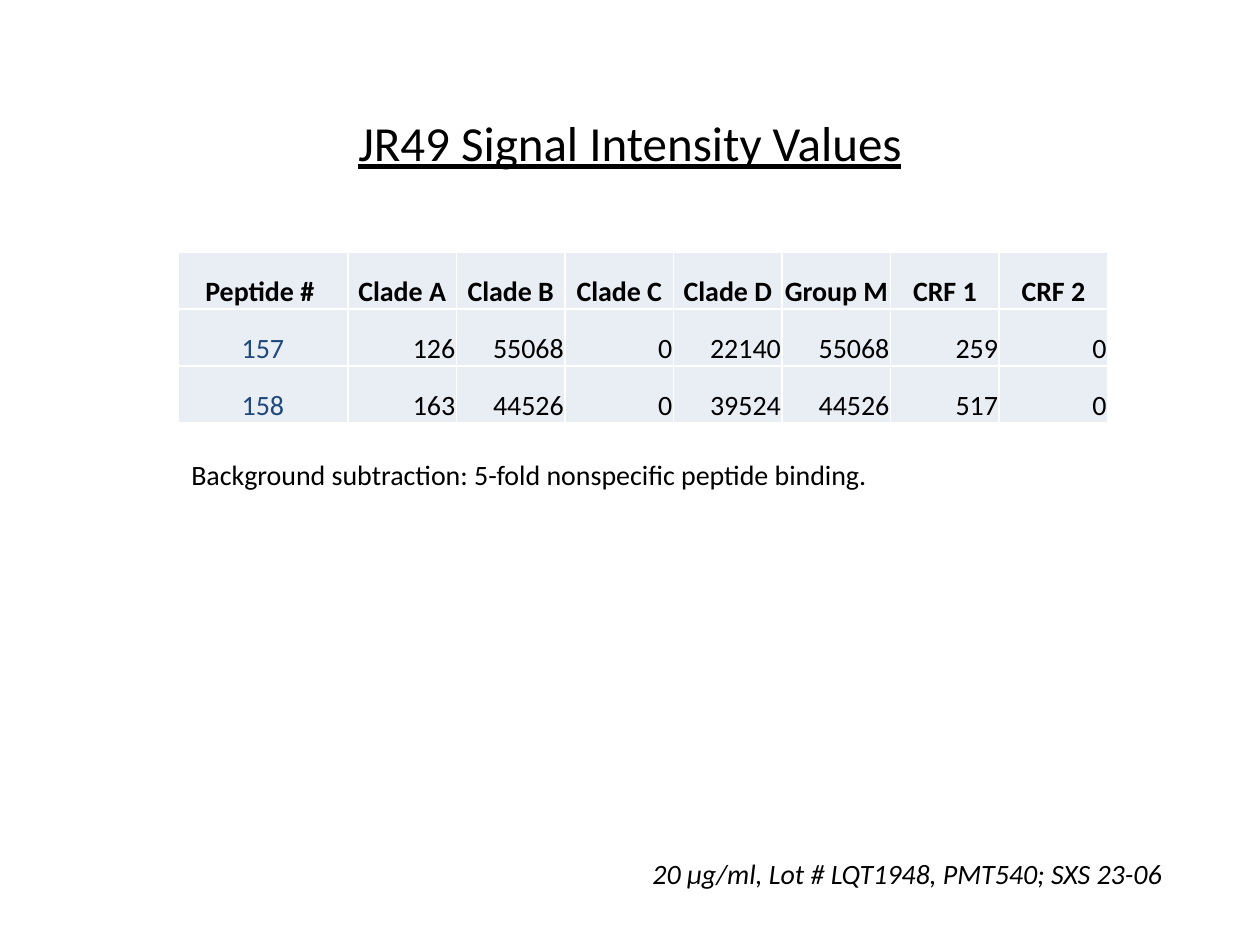
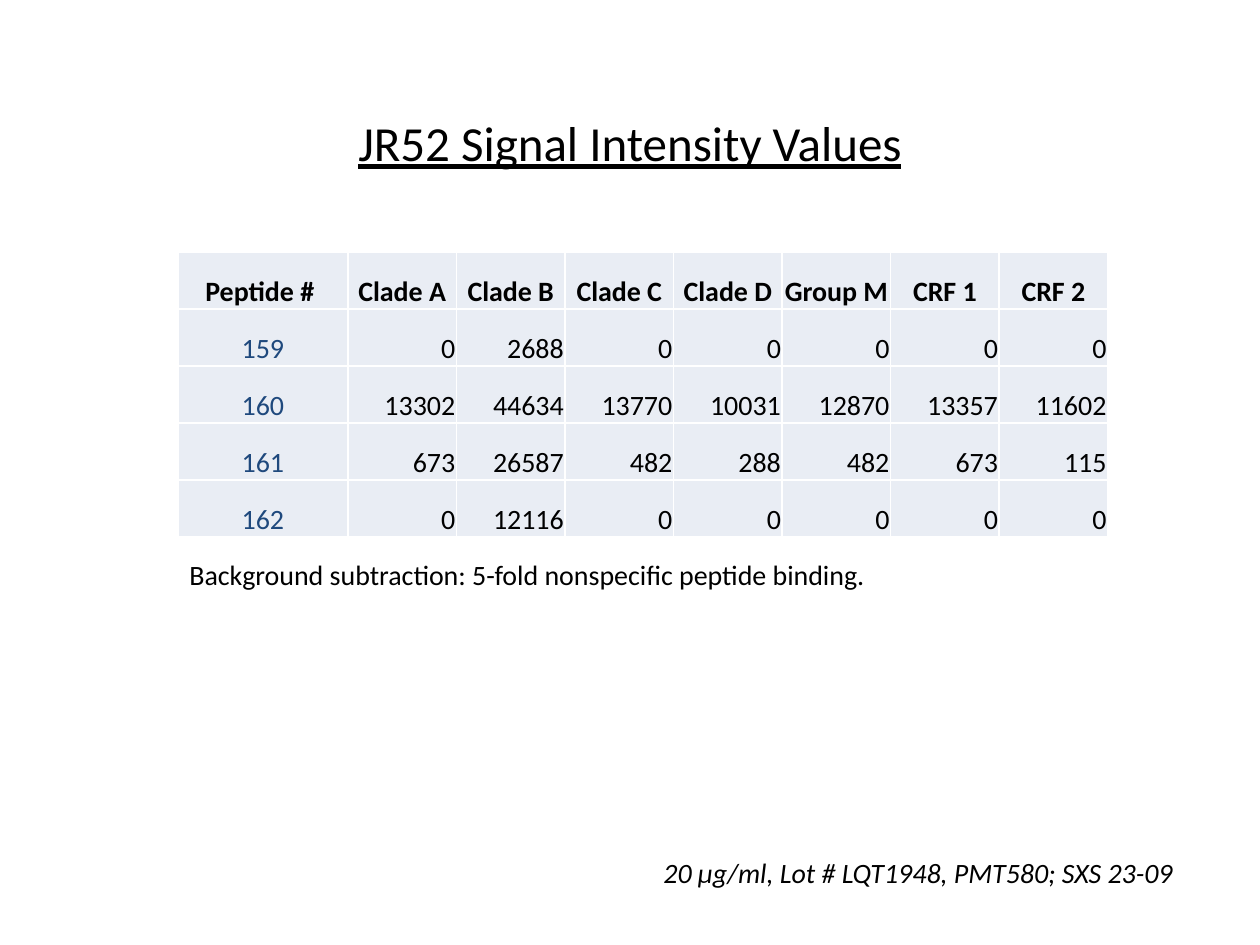
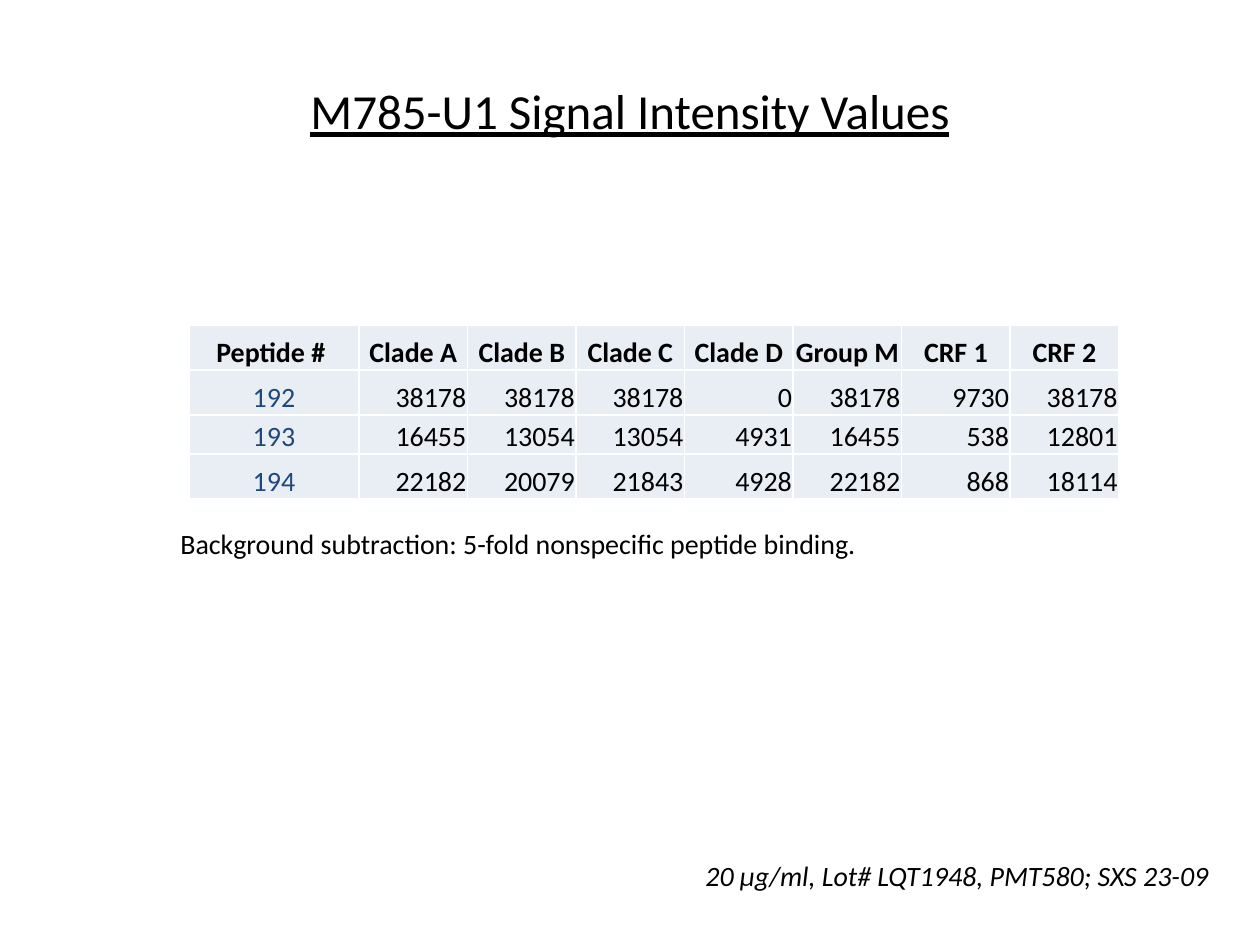
import lxml.etree
import pptx
import pptx.dml.color
import pptx.enum.text
import pptx.oxml.ns
import pptx.util

PIXELS_PER_INCH = 126
FONT = "Calibri"
BLACK, NAVY, PALE, WHITE = "000000", "1F497D", "E9EDF4", "FFFFFF"
ALIGN = pptx.enum.text.PP_ALIGN
ANCHOR = pptx.enum.text.MSO_ANCHOR
AUTO_SIZE = pptx.enum.text.MSO_AUTO_SIZE

TITLE_FORMAT = {"size": pptx.util.Pt(28), "underline": True}
BODY_FORMAT = {"size": pptx.util.Pt(16)}
FOOTER_FORMAT = {**BODY_FORMAT, "italic": True}
HEADER_FORMAT = {**BODY_FORMAT, "bold": True}
CELL_FRAME = {
    "vertical_anchor": ANCHOR.BOTTOM,
    "margin_left": pptx.util.Inches(0.01),
    "margin_top": pptx.util.Inches(0.01),
    "margin_right": pptx.util.Inches(0.01),
    "margin_bottom": 0,
}

TABLE_WIDTH, PEPTIDE_WIDTH = 930, 170
HEADERS = ["Peptide # ", "Clade A", "Clade B", "Clade C", "Clade D", "Group M", "CRF 1", "CRF 2"]
NOTE = "Background subtraction: 5-fold nonspecific peptide binding."

SLIDES = [
    {
        "title": "JR49 Signal Intensity Values",
        "title_top": 63,
        "table_at": (178, 252),
        "row_heights": [57] * 3,
        "readings": [
            [157, 126, 55068, 0, 22140, 55068, 259, 0],
            [158, 163, 44526, 0, 39524, 44526, 517, 0],
        ],
        "footer": "20 µg/ml, Lot # LQT1948, PMT540; SXS 23-06",
        "footer_at": (640, 850),
        "note_at": (179, 451),
    },
    {
        "title": "JR52 Signal Intensity Values",
        "title_top": 63,
        "table_at": (178, 252),
        "row_heights": [57] * 5,
        "readings": [
            [159, 0, 2688, 0, 0, 0, 0, 0],
            [160, 13302, 44634, 13770, 10031, 12870, 13357, 11602],
            [161, 673, 26587, 482, 288, 482, 673, 115],
            [162, 0, 12116, 0, 0, 0, 0, 0],
        ],
        "footer": "20 µg/ml, Lot # LQT1948, PMT580; SXS 23-09",
        "footer_at": (651, 849),
        "note_at": (177, 551),
    },
    {
        "title": "M785-U1 Signal Intensity Values",
        "title_top": 31,
        "table_at": (189, 325),
        "row_heights": [45, 45, 39, 45],
        "readings": [
            [192, 38178, 38178, 38178, 0, 38178, 9730, 38178],
            [193, 16455, 13054, 13054, 4931, 16455, 538, 12801],
            [194, 22182, 20079, 21843, 4928, 22182, 868, 18114],
        ],
        "footer": "20 µg/ml, Lot# LQT1948, PMT580; SXS 23-09",
        "footer_at": (693, 852),
        "note_at": (168, 520),
    },
]


def px(length):
    """Turn pixels into EMU."""
    return pptx.util.Inches(length / PIXELS_PER_INCH)


def color(value):
    """Turn a hex string into a colour."""
    return pptx.dml.color.RGBColor.from_string(value)


def apply(target, values):
    """Set each named attribute on the target."""
    for name, value in values.items():
        setattr(target, name, value)


def write(text_frame, text, formats, align, text_color=BLACK):
    """Put one formatted paragraph into a text frame."""
    paragraph = text_frame.paragraphs[0]
    paragraph.alignment = align
    run = paragraph.add_run()
    run.text = text
    apply(run.font, {"name": FONT, **formats})
    run.font.color.rgb = color(text_color)


def place_title(slide, text, top):
    """Move and fill the title placeholder."""
    title = slide.shapes.title
    apply(title, {"left": px(63), "top": px(top), "width": px(1134), "height": px(158)})
    apply(title.text_frame, {"vertical_anchor": ANCHOR.MIDDLE, "auto_size": AUTO_SIZE.NONE})
    write(title.text_frame, text, TITLE_FORMAT, ALIGN.CENTER)


def add_label(slide, text, position, width, formats):
    """Add a single-line text box that grows with its text."""
    left, top = position
    label = slide.shapes.add_textbox(px(left), px(top), px(width), px(47))
    apply(label.text_frame, {"word_wrap": False, "auto_size": AUTO_SIZE.SHAPE_TO_FIT_TEXT})
    write(label.text_frame, text, formats, ALIGN.LEFT)


def add_borders(cell):
    """Draw a thin white line on every side of a cell."""
    qualify = pptx.oxml.ns.qn
    properties = cell._tc.get_or_add_tcPr()
    for side in ("a:lnL", "a:lnR", "a:lnT", "a:lnB"):
        line = lxml.etree.SubElement(properties, qualify(side), w=str(pptx.util.Pt(1)))
        fill = lxml.etree.SubElement(line, qualify("a:solidFill"))
        lxml.etree.SubElement(fill, qualify("a:srgbClr"), val=WHITE)


def fill_cell(cell, text, formats, align, text_color):
    """Format and fill one table cell."""
    apply(cell, CELL_FRAME)
    add_borders(cell)
    cell.fill.solid()
    cell.fill.fore_color.rgb = color(PALE)
    write(cell.text_frame, text, formats, align, text_color)


def add_readings(slide, position, row_heights, readings):
    """Add the table of signal intensities."""
    left, top = position
    rows = [HEADERS, *readings]
    frame = slide.shapes.add_table(
        len(rows), len(HEADERS), px(left), px(top), px(TABLE_WIDTH), px(sum(row_heights)))
    table = frame.table
    apply(table, {"first_row": False, "horz_banding": False})
    clade_width = (TABLE_WIDTH - PEPTIDE_WIDTH) / (len(HEADERS) - 1)
    for index, column in enumerate(table.columns):
        column.width = px(clade_width if index else PEPTIDE_WIDTH)
    for row, height in zip(table.rows, row_heights):
        row.height = px(height)
    for row_index, values in enumerate(rows):
        for column_index, value in enumerate(values):
            is_header, is_peptide = row_index == 0, column_index == 0
            fill_cell(
                table.cell(row_index, column_index),
                str(value),
                HEADER_FORMAT if is_header else BODY_FORMAT,
                ALIGN.CENTER if is_header or is_peptide else ALIGN.RIGHT,
                NAVY if is_peptide and not is_header else BLACK)


def main():
    """Build the presentation."""
    presentation = pptx.Presentation()
    apply(presentation, {"slide_width": px(1260), "slide_height": px(945)})
    for content in SLIDES:
        slide = presentation.slides.add_slide(presentation.slide_layouts[5])
        place_title(slide, content["title"], content["title_top"])
        add_readings(slide, content["table_at"], content["row_heights"], content["readings"])
        add_label(slide, content["footer"], content["footer_at"], 537, FOOTER_FORMAT)
        add_label(slide, NOTE, content["note_at"], 716, BODY_FORMAT)
    presentation.save("out.pptx")


if __name__ == "__main__":
    main()
